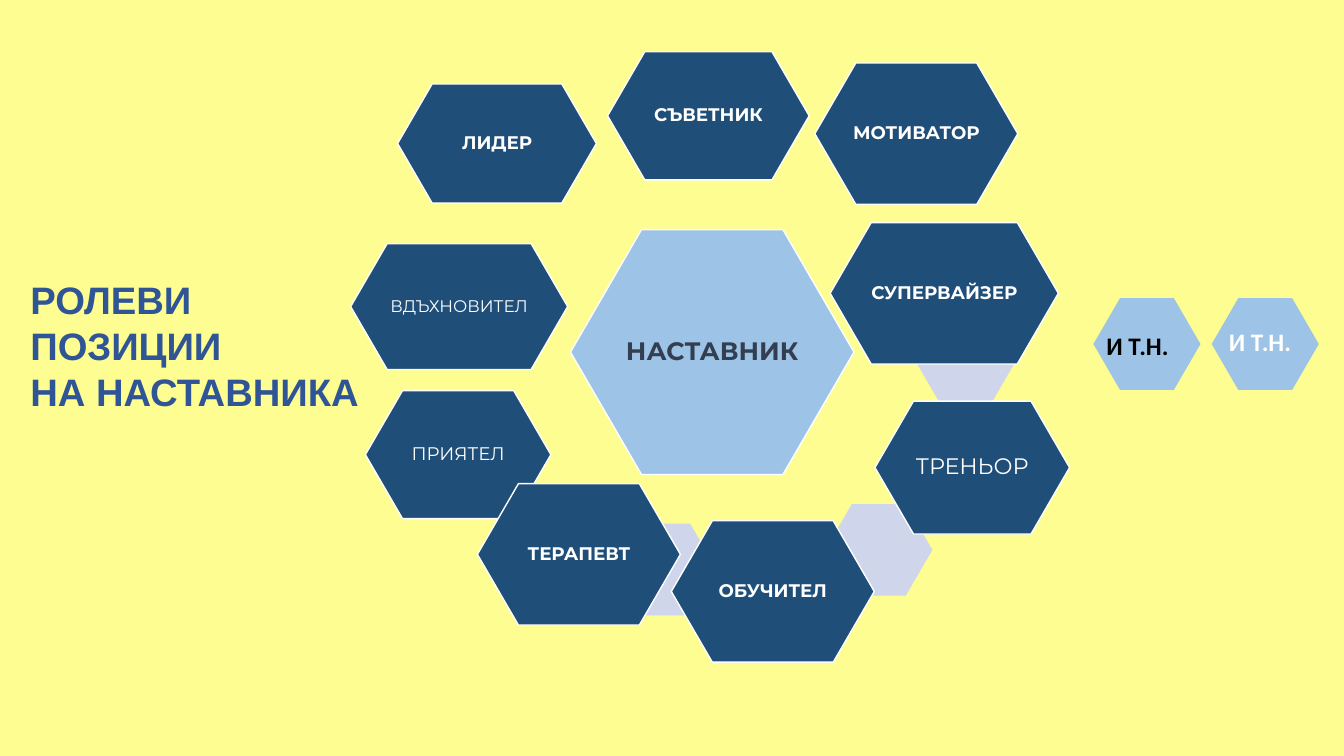
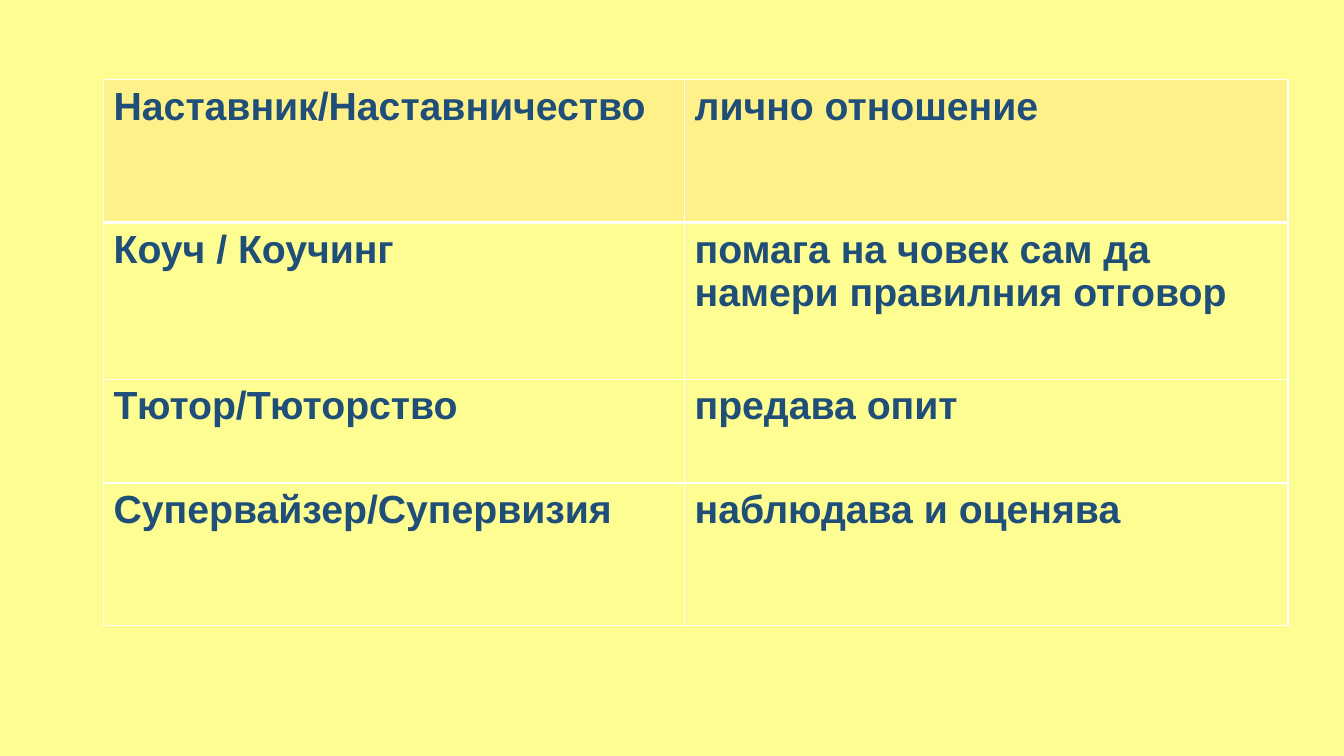
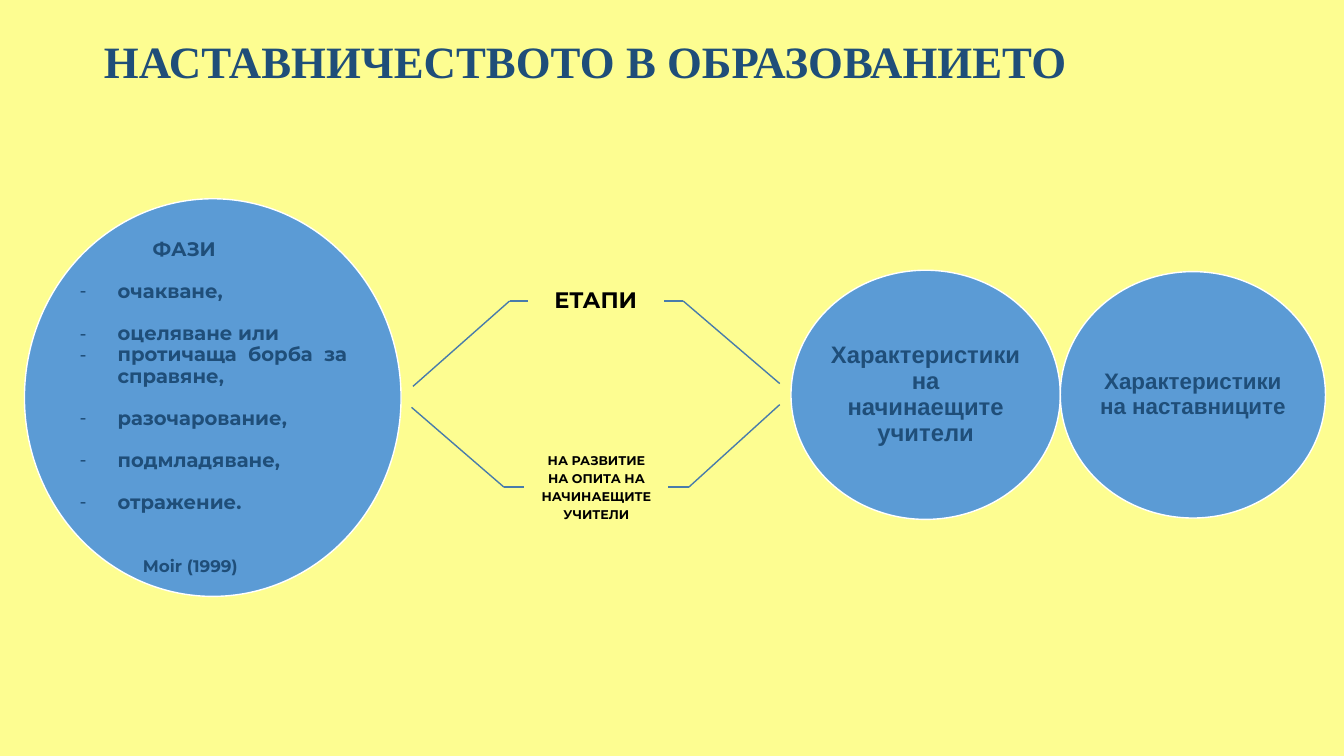
from itertools import pairwise

from lxml.etree import SubElement
from pptx import Presentation
from pptx.dml.color import RGBColor
from pptx.enum.shapes import MSO_CONNECTOR, MSO_SHAPE
from pptx.enum.text import MSO_ANCHOR, MSO_AUTO_SIZE, PP_ALIGN
from pptx.oxml.ns import qn
from pptx.util import Pt

YELLOW, HEADER = "FDFD91", "FFF189"
NAVY, ROYAL, SLATE = "1F4E79", "2F5597", "333F50"
SKY, BLUE, LILAC, STEEL = "9DC3E6", "5B9BD5", "CFD5EA", "497CAB"
WHITE, BLACK = "FFFFFF", "000000"
TITLE_ONLY, TITLE_BODY, BLANK = 5, 1, 6

ROLES = [
    ("НАСТАВНИК", 407.5, 164, 202.5, 175, 18, True, SKY, SLATE),
    ("СЪВЕТНИК", 434, 37, 144, 91.5, 13, True, NAVY, WHITE),
    ("МОТИВАТОР", 582, 45, 145, 101, 13, True, NAVY, WHITE),
    ("ТРЕНЬОР", 625, 286.5, 139, 95, 16, False, NAVY, WHITE),
    ("ПРИЯТЕЛ", 261, 279, 132.5, 91.5, 13, False, NAVY, WHITE),
    ("ВДЪХНОВИТЕЛ", 250.5, 174, 155, 90, 12, False, NAVY, WHITE),
    ("ЛИДЕР", 284, 60, 142, 85, 13, True, NAVY, WHITE),
    ("ТЕРАПЕВТ", 341, 345.5, 145, 101, 13, True, NAVY, WHITE),
    ("СУПЕРВАЙЗЕР", 593, 159, 163, 101, 13, True, NAVY, WHITE),
    ("ОБУЧИТЕЛ", 479.5, 372, 145, 101, 13, True, NAVY, WHITE),
]
SMALL_HEXAGONS = [
    (651.5, 221, LILAC), (589.5, 360, LILAC), (435.5, 374, LILAC),
    (781, 213, SKY), (865.5, 213, SKY),
]
CONCEPTS = [
    ("Наставник/Наставничество", "лично отношение"),
    ("Коуч / Коучинг", "помага на човек сам да намери правилния отговор"),
    ("Тютор/Тюторство", "предава опит"),
    ("Супервайзер/Супервизия", "наблюдава и оценява"),
]
PHASES = [
    ("очакване,", 15), ("оцеляване или", 15),
    ("протичаща борба за справяне,", 0), ("разочарование,", 15),
    ("подмладяване,", 15), ("отражение.", 15),
]
ARMS = [
    [(295, 276), (364, 215), (377, 215)],
    [(557, 274), (488, 215), (474, 215)],
    [(294, 291), (360, 348), (374, 348)],
    [(557, 289), (492, 348), (477, 348)],
]


def paint(target, color):
    """Give a fill, or the colour of a font, a solid hex colour."""
    if hasattr(target, "solid"):
        target.solid()
        target = target.fore_color
    else:
        target = target.color
    target.rgb = RGBColor.from_string(color)


def place(box, left, top, width, height):
    """Move and size a shape in points."""
    box.left, box.top, box.width, box.height = map(Pt, (left, top, width, height))


def set_frame(frame, anchor=MSO_ANCHOR.MIDDLE, inset=0, wrap=True):
    """Set anchor, margins and wrapping of a text frame."""
    frame.auto_size = MSO_AUTO_SIZE.NONE
    frame.word_wrap = wrap
    frame.vertical_anchor = anchor
    frame.margin_left = frame.margin_right = Pt(inset)
    frame.margin_top = frame.margin_bottom = Pt(inset)


def format_para(para, text, size=13, color=NAVY, font="Montserrat", bold=True,
                align=PP_ALIGN.CENTER, spacing=0.9, before=0, after=0):
    """Fill one paragraph with formatted text."""
    para.alignment = align
    para.line_spacing = spacing
    para.space_before, para.space_after = Pt(before), Pt(after)
    span = para.add_run()
    span.text = text
    span.font.name, span.font.size, span.font.bold = font, Pt(size), bold
    paint(span.font, color)


def write(frame, text, **style):
    """Write each line of the text as one paragraph."""
    for index, line in enumerate(text.split("\n")):
        para = frame.add_paragraph() if index else frame.paragraphs[0]
        format_para(para, line, **style)


def set_bullet(para, left, hanging=0, mark=None):
    """Set the indent of a paragraph and its bullet, if any."""
    properties = para._p.get_or_add_pPr()
    properties.set("marL", str(Pt(left)))
    properties.set("indent", str(Pt(-hanging)))
    if mark:
        SubElement(properties, qn("a:buChar")).set("char", mark)
    else:
        SubElement(properties, qn("a:buNone"))


def add_figure(page, kind, bounds, color, outlined=True):
    """Draw a filled shape, with a white outline if wanted."""
    figure = page.shapes.add_shape(kind, *map(Pt, bounds))
    figure.shadow.inherit = False
    paint(figure.fill, color)
    if outlined:
        paint(figure.line.fill, WHITE)
        figure.line.width = Pt(1)
    else:
        figure.line.fill.background()
    return figure


def add_hexagon(page, bounds, color, outlined=True):
    """Draw a hexagon."""
    hexagon = add_figure(page, MSO_SHAPE.HEXAGON, bounds, color, outlined)
    hexagon.adjustments[0] = 0.29
    return hexagon


def add_text(page, text, bounds, inset=0, wrap=True, **style):
    """Add a text box."""
    box = page.shapes.add_textbox(*map(Pt, bounds))
    set_frame(box.text_frame, inset=inset, wrap=wrap)
    write(box.text_frame, text, **style)


def set_title(page, text, bounds, **style):
    """Move and fill the title placeholder."""
    title = page.shapes.title
    place(title, *bounds)
    set_frame(title.text_frame, inset=7.2)
    write(title.text_frame, text, align=PP_ALIGN.LEFT, spacing=1, **style)


def add_line(page, start, end):
    """Draw a thin straight line between two points."""
    line = page.shapes.add_connector(MSO_CONNECTOR.STRAIGHT, *map(Pt, start + end))
    paint(line.line.fill, STEEL)
    line.line.width = Pt(1)
    SubElement(line.element.spPr, qn("a:effectLst"))


def set_borders(cell, **widths):
    """Give the sides of a cell white borders."""
    properties = cell._tc.get_or_add_tcPr()
    for index, side in enumerate(("L", "R", "T", "B")):
        border = properties.makeelement(qn(f"a:ln{side}"), {"w": str(Pt(widths.get(side, 1)))})
        fill = SubElement(border, qn("a:solidFill"))
        SubElement(fill, qn("a:srgbClr")).set("val", WHITE)
        properties.insert(index, border)


def add_concept_table(page):
    """Add the table of concepts and their meaning."""
    bounds = map(Pt, (74, 57, 846, 390))
    table = page.shapes.add_table(len(CONCEPTS), 2, *bounds).table
    table.horz_banding = False
    for column, width in zip(table.columns, (415, 431)):
        column.width = Pt(width)
    for row, height in zip(table.rows, (102, 112, 74, 102)):
        row.height = Pt(height)
    for row, texts in enumerate(CONCEPTS):
        for column, text in enumerate(texts):
            cell = table.cell(row, column)
            paint(cell.fill, YELLOW if row else HEADER)
            write(cell.text_frame, text, size=28, font="Arial",
                  align=PP_ALIGN.LEFT, spacing=1)
            set_borders(cell, T=3 if row == 1 else 1, B=1 if row else 3)


def add_phases(page):
    """Draw the circle with the list of phases."""
    circle = add_figure(page, MSO_SHAPE.OVAL, (17.5, 142, 269, 284), BLUE)
    body = page.placeholders[1]
    circle.element.addnext(body.element)
    place(body, 57, 171, 191, 201)
    frame = body.text_frame
    set_frame(frame, anchor=MSO_ANCHOR.TOP)
    write(frame, "ФАЗИ", size=14, align=PP_ALIGN.LEFT)
    set_bullet(frame.paragraphs[0], 52)
    for text, before in PHASES:
        para = frame.add_paragraph()
        format_para(para, text, size=14, align=PP_ALIGN.JUSTIFY, before=before)
        set_bullet(para, 27, 27, "-")
    add_text(page, "Moir (1999)", (95, 393, 141, 22), inset=7.2, size=12,
             align=PP_ALIGN.LEFT, spacing=1)


def build_roles(deck):
    """Build the slide of the mentor's roles."""
    page = deck.slides.add_slide(deck.slide_layouts[TITLE_ONLY])
    set_title(page, "РОЛЕВИ ПОЗИЦИИ\nНА НАСТАВНИКА", (14.5, 195, 269, 103),
              size=27.3, font="Arial", color=ROYAL)
    for left, top, color in SMALL_HEXAGONS:
        add_hexagon(page, (left, top, 76.5, 65.5), color, outlined=False)
    for text, left, top, width, height, size, bold, fill, color in ROLES:
        hexagon = add_hexagon(page, (left, top, width, height), fill)
        set_frame(hexagon.text_frame, wrap=False)
        write(hexagon.text_frame, text, size=size, bold=bold, color=color)
    for left, top, color in ((782.5, 232, BLACK), (870, 229, WHITE)):
        add_text(page, "И Т.Н.", (left, top, 60, 29), inset=4, wrap=False,
                 size=18, font="Calibri", color=color, spacing=1)


def build_concepts(deck):
    """Build the slide that compares concepts."""
    add_concept_table(deck.slides.add_slide(deck.slide_layouts[BLANK]))


def build_education(deck):
    """Build the slide of mentoring in education."""
    page = deck.slides.add_slide(deck.slide_layouts[TITLE_BODY])
    set_title(page, "НАСТАВНИЧЕСТВОТО В ОБРАЗОВАНИЕТО", (67, 20, 740, 46),
              size=32, font="Times New Roman")
    add_phases(page)
    for arm in ARMS:
        for start, end in pairwise(arm):
            add_line(page, start, end)
    add_text(page, "ЕТАПИ", (377, 148, 97, 134), size=16, color=BLACK)
    add_text(page, "НА РАЗВИТИЕ\nНА ОПИТА НА\nНАЧИНАЕЩИТЕ\nУЧИТЕЛИ",
             (374, 282, 104, 134), size=9, color=BLACK, after=3)
    for text, bounds, size in (
        ("Характеристики на начинаещите учители", (565, 193, 192.4, 178), 17),
        ("Характеристики на наставниците", (757.4, 194, 189.4, 176), 16),
    ):
        circle = add_figure(page, MSO_SHAPE.OVAL, bounds, BLUE)
        set_frame(circle.text_frame)
        write(circle.text_frame, text, size=size, font="Arial")


def main():
    """Build and save the deck."""
    deck = Presentation()
    deck.slide_width, deck.slide_height = Pt(960), Pt(540)
    paint(deck.slide_master.background.fill, YELLOW)
    build_roles(deck)
    build_concepts(deck)
    build_education(deck)
    deck.save("out.pptx")


if __name__ == "__main__":
    main()
